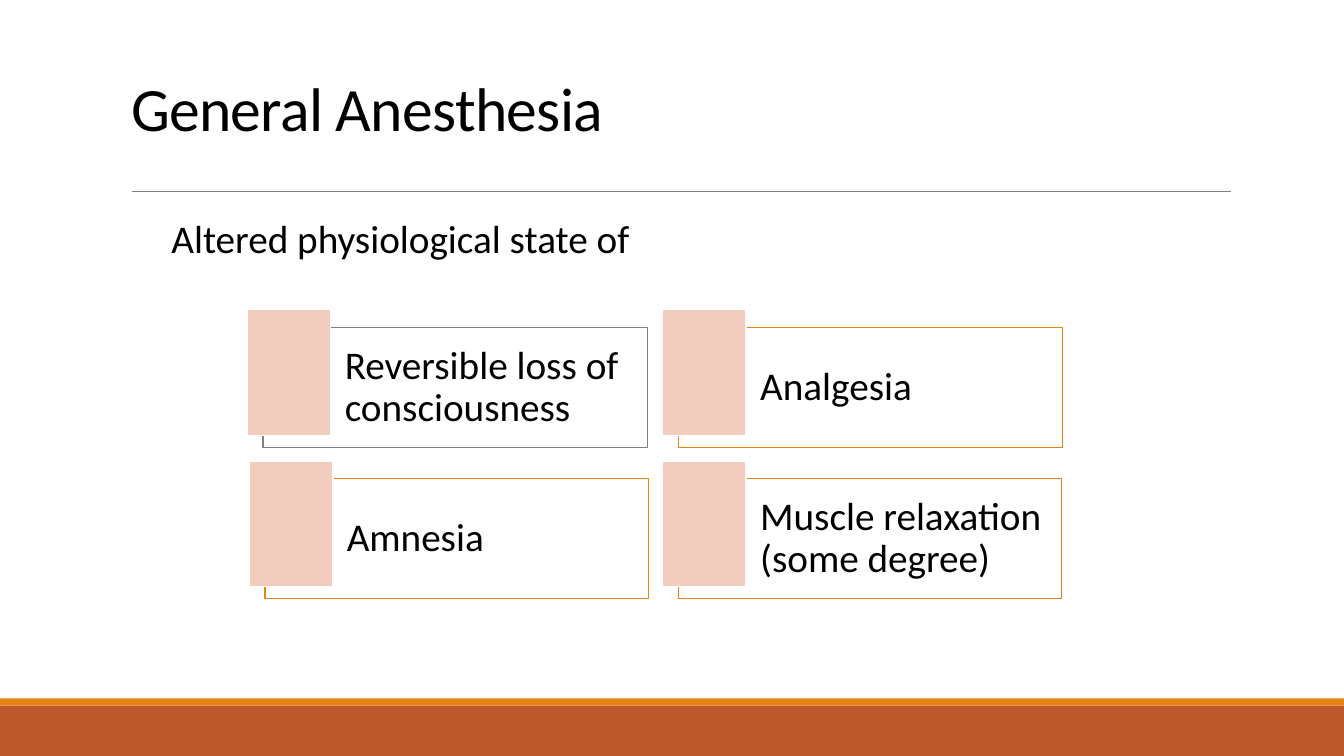
from lxml import etree
from pptx import Presentation
from pptx import util as u
from pptx.dml.color import RGBColor
from pptx.enum import shapes, text
from pptx.oxml.ns import qn

HUES = {"ink": "000000", "paper": "FFFFFF", "rust": "BD582C",
        "amber": "E48312", "gray": "808080", "peach": "F2CDBD"}


class Deck:
    def __init__(self):
        self.prs = Presentation()
        self.prs.slide_width = u.Inches(13.33)
        self.prs.slide_height = u.Inches(7.5)
        self.slide = self.prs.slides.add_slide(self.prs.slide_layouts[1])
        self.font = "Calibri"

    def hue(self, name):
        return RGBColor.from_string(HUES[name])

    def label(self, shape, words, size, anchor, track=None):
        """Fill a shape with one left-aligned paragraph."""
        frame = shape.text_frame
        frame.word_wrap = True
        frame.auto_size = text.MSO_AUTO_SIZE.NONE
        frame.vertical_anchor = anchor
        para = frame.paragraphs[0]
        para.alignment = text.PP_ALIGN.LEFT
        para.line_spacing = 0.9
        run = para.add_run()
        run.text = words
        run.font.size = u.Pt(size)
        run.font.name = self.font
        run.font.color.rgb = self.hue("ink")
        if track:
            run.font._element.set("spc", str(track))
        return para

    def place(self, shape, box):
        shape.left, shape.top, shape.width, shape.height = map(u.Inches, box)

    def title(self, words, box):
        shape = self.slide.shapes.title
        self.place(shape, box)
        self.label(shape, words, 44, text.MSO_ANCHOR.MIDDLE, -50)

    def body(self, words, box):
        shape = self.slide.placeholders[1]
        self.place(shape, box)
        para = self.label(shape, words, 28, text.MSO_ANCHOR.TOP)
        para.space_before = u.Pt(10)
        props = para._p.get_or_add_pPr()
        props.set("marL", "0")
        props.set("indent", "0")
        etree.SubElement(props, qn("a:buNone"))

    def rect(self, box, fill, line=None, width=1, alpha=None):
        shape = self.slide.shapes.add_shape(
            shapes.MSO_SHAPE.RECTANGLE, *map(u.Inches, box))
        shape.shadow.inherit = False
        shape.fill.solid()
        shape.fill.fore_color.rgb = self.hue(fill)
        if alpha:
            color = shape._element.spPr.find(qn("a:solidFill"))[0]
            etree.SubElement(color, qn("a:alpha")).set("val", str(alpha * 1000))
        if line:
            shape.line.color.rgb = self.hue(line)
            shape.line.width = u.Pt(width)
        else:
            shape.line.fill.background()
        return shape

    def rule(self, x1, x2, y):
        line = self.slide.shapes.add_connector(
            shapes.MSO_CONNECTOR.STRAIGHT, *map(u.Inches, (x1, y, x2, y)))
        line.line.color.rgb = self.hue("gray")
        line.line.width = u.Pt(0.5)
        etree.SubElement(line._element.spPr, qn("a:effectLst"))

    def card(self, words, x, y, wide, edge):
        """Draw a framed label with a tab over its upper left corner."""
        frame = self.rect((x, y, wide, 1.19), "paper", edge, 1, 40)
        self.label(frame, words, 28, text.MSO_ANCHOR.MIDDLE)
        pad = frame.text_frame
        pad.margin_left = u.Inches(0.81)
        pad.margin_top = pad.margin_right = pad.margin_bottom = u.Inches(0.12)
        self.rect((x - 0.16, y - 0.18, 0.83, 1.25), "peach", "paper", 1.25)


def main():
    deck = Deck()
    deck.rect((0, 7, 13.33, 0.5), "rust")
    deck.rect((0, 6.93, 13.33, 0.07), "amber")
    deck.rule(1.31, 12.21, 1.9)
    deck.title("General Anesthesia", (1.2, 0.31, 11, 1.59))
    deck.body("Altered physiological state of", (1.6, 2.13, 10.87, 4.49))
    cards = [("Reversible loss of consciousness", 2.61, 3.25, 3.81, "gray"),
             ("Analgesia", 6.73, 3.25, 3.81, "amber"),
             ("Amnesia", 2.63, 4.75, 3.8, "amber"),
             ("Muscle relaxation (some degree)", 6.73, 4.75, 3.8, "amber")]
    for card in cards:
        deck.card(*card)
    deck.prs.save("out.pptx")


if __name__ == "__main__":
    main()
